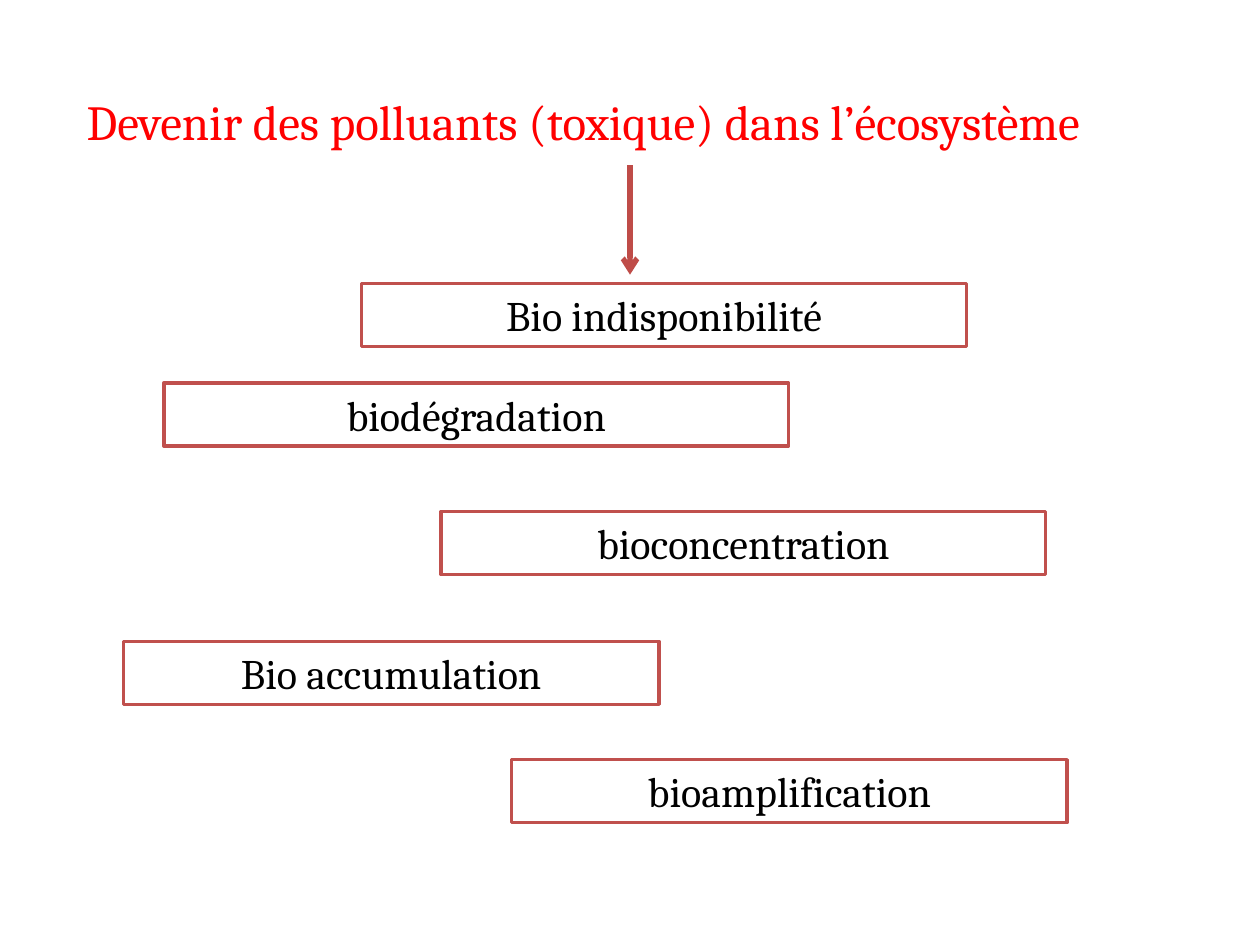
from lxml.etree import SubElement
from pptx import Presentation
from pptx.dml.color import RGBColor
from pptx.enum.shapes import MSO_CONNECTOR, MSO_SHAPE
from pptx.enum.text import MSO_ANCHOR, MSO_AUTO_SIZE, PP_ALIGN
from pptx.oxml.ns import qn
from pptx.util import Inches, Pt

FONT = "Cambria"
RED = RGBColor(0xFF, 0x00, 0x00)
BLACK = RGBColor(0x00, 0x00, 0x00)
WHITE = RGBColor(0xFF, 0xFF, 0xFF)
BORDER = RGBColor(0xC0, 0x50, 0x4D)
ARROW = RGBColor(0xBF, 0x4C, 0x48)

TITLE = "Devenir des polluants (toxique) dans l’écosystème"
BOX_HEIGHT = 0.5
# Label, left, top, width in inches
PROCESSES = [
    ("Bio indisponibilité", 2.87, 2.25, 4.8),
    ("biodégradation", 1.3, 3.04, 4.96),
    ("bioconcentration", 3.5, 4.06, 4.8),
    ("Bio accumulation", 0.98, 5.09, 4.25),
    ("bioamplification", 4.06, 6.03, 4.41),
]


def write(shape, text, size, color, align):
    tf = shape.text_frame
    tf.word_wrap = True
    tf.auto_size = MSO_AUTO_SIZE.SHAPE_TO_FIT_TEXT
    tf.vertical_anchor = MSO_ANCHOR.TOP
    p = tf.paragraphs[0]
    p.alignment = align
    r = p.add_run()
    r.text = text
    r.font.name = FONT
    r.font.size = Pt(size)
    r.font.color.rgb = color


prs = Presentation()
prs.slide_width, prs.slide_height = Inches(10), Inches(7.5)
s = prs.slides.add_slide(prs.slide_layouts[6])

# Title
title = s.shapes.add_textbox(Inches(0.59), Inches(0.68), Inches(9.13), Inches(0.57))
write(title, TITLE, 28, RED, PP_ALIGN.LEFT)

# Process boxes
for label, left, top, width in PROCESSES:
    box = s.shapes.add_shape(MSO_SHAPE.RECTANGLE, Inches(left), Inches(top),
                             Inches(width), Inches(BOX_HEIGHT))
    box.shadow.inherit = False
    box.fill.solid()
    box.fill.fore_color.rgb = WHITE
    box.line.color.rgb = BORDER
    box.line.width = Pt(2)
    write(box, label, 24, BLACK, PP_ALIGN.CENTER)

# Arrow from the title down to the first box
center = prs.slide_width // 2
arrow = s.shapes.add_connector(MSO_CONNECTOR.STRAIGHT, center, Inches(1.31),
                               center, Inches(2.18))
arrow.line.color.rgb = ARROW
arrow.line.width = Pt(3)
SubElement(arrow.line._get_or_add_ln(), qn("a:tailEnd"), type="arrow")
SubElement(arrow._element.spPr, qn("a:effectLst"))

prs.save("out.pptx")
